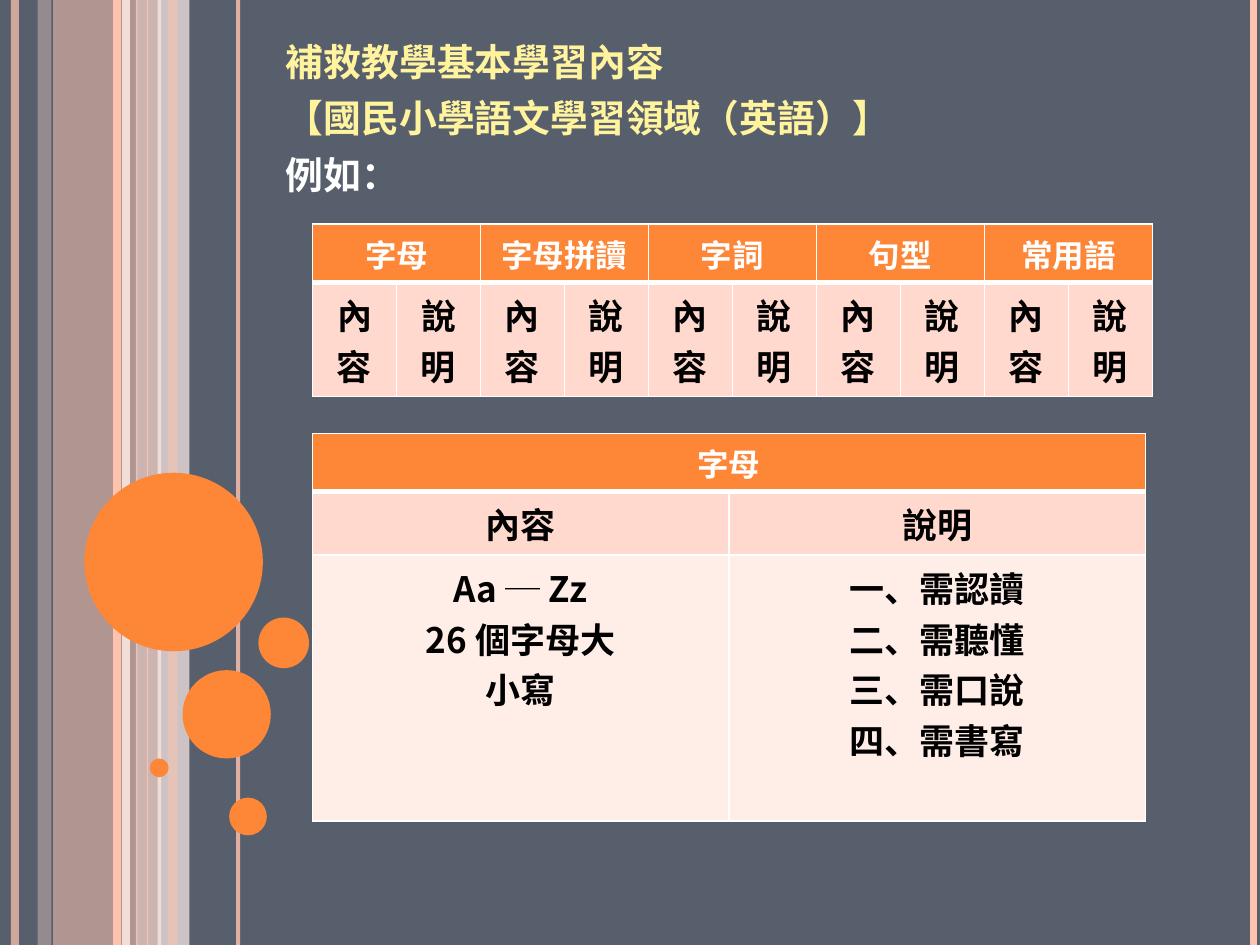
from copy import deepcopy
from lxml.etree import SubElement
from pptx import Presentation
from pptx.dml.color import RGBColor
from pptx.enum.shapes import MSO_CONNECTOR, MSO_SHAPE
from pptx.enum.text import MSO_ANCHOR, MSO_AUTO_SIZE, PP_ALIGN
from pptx.oxml.ns import qn
from pptx.util import Cm, Pt


class Theme:
    font = "Noto Sans CJK SC"
    back, white, black, gold = "575F6D", "FFFFFF", "000000", "FFF39D"
    orange, peach, pale, blush = "FE8637", "FEC3AE", "FFD9CE", "FFEDE8"
    title, head, body = 27, 18, 20
    thin, thick = 1, 3


# Content
TITLE = [("補救教學基本學習內容", Theme.gold),
         ("【國民小學語文學習領域（英語）】", Theme.gold),
         ("例如：", Theme.white)]
PAIR = ["內容", "說明"]
TOPICS = ["字母", "字母拼讀", "字詞", "句型", "常用語"]
LETTERS = ["Aa ─ Zz\n26 個字母大\n小寫",
           "一、需認讀\n二、需聽懂\n三、需口說\n四、需書寫"]

# Tables: left, top, width in cm; row heights; header texts; body rows
TABLES = [
    (6.3, 4.52, 16.93, [1.17, 2.29], TOPICS, [PAIR * len(TOPICS)]),
    (6.3, 8.74, 16.79, [1.17, 1.27, 5.36], TOPICS[:1], [PAIR, LETTERS]),
]

# Backdrop, in cm: bands (left, width, colour, opacity %)
BANDS = [(1.07, 1.7, Theme.peach, 54), (0.76, 0.28, Theme.pale, 36),
         (2.74, 0.51, Theme.pale, 70), (3.18, 0.64, Theme.blush, 71)]
TOP_BAND = (3.38, 0.2, Theme.peach, 51)
# Lines (x, points, colour, opacity %)
LINES = [(0.3, 4.5, Theme.peach, 73), (2.54, 4.5, Theme.blush, 83),
         (2.36, 4.5, Theme.peach, 100), (4.8, 2.25, Theme.peach, 82),
         (2.97, 0.75, Theme.peach, 100)]
EDGE = (25.27, 4.5, Theme.peach, 100)
# Dots (left, top, size)
DOTS = [(1.7, 9.53, 3.6), (3.68, 13.51, 1.78), (3.02, 15.29, 0.38),
        (4.62, 16.08, 0.76), (5.21, 12.45, 1.02)]

deck = Presentation()
deck.slide_width, deck.slide_height = Cm(25.4), Cm(19.05)
slide = deck.slides.add_slide(deck.slide_layouts[5])
shapes = slide.shapes


def paint(fill, color, alpha=100):
    fill.solid()
    fill.fore_color.rgb = RGBColor.from_string(color)
    if alpha < 100:
        for tag in fill.fore_color._xFill.iter(qn("a:srgbClr")):
            SubElement(tag, qn("a:alpha"), val=str(alpha * 1000))


def add_form(kind, left, top, width, height, color, alpha=100):
    form = shapes.add_shape(kind, Cm(left), Cm(top), Cm(width), Cm(height))
    form.shadow.inherit = False
    paint(form.fill, color, alpha)
    form.line.fill.background()


def add_band(left, width, color, alpha):
    add_form(MSO_SHAPE.RECTANGLE, left, 0, width, 19.05, color, alpha)


def add_line(x, size, color, alpha):
    line = shapes.add_connector(MSO_CONNECTOR.STRAIGHT, Cm(x), 0, Cm(x),
                                deck.slide_height)
    line.line.width = Pt(size)
    paint(line.line.fill, color, alpha)
    SubElement(line.element.spPr, qn("a:effectLst"))


def style(run, size, color):
    font = run.font
    font.size, font.bold, font.name = Pt(size), True, Theme.font
    font.color.rgb = RGBColor.from_string(color)
    SubElement(font._element, qn("a:ea"), typeface=Theme.font)


def set_edges(cell, top, bottom):
    props = cell._tc.get_or_add_tcPr()
    sides = [("L", Theme.thin), ("R", Theme.thin), ("T", top), ("B", bottom)]
    for spot, (side, size) in enumerate(sides):
        edge = SubElement(props, qn(f"a:ln{side}"), w=str(Pt(size)))
        fill = SubElement(edge, qn("a:solidFill"))
        SubElement(fill, qn("a:srgbClr"), val=Theme.white)
        props.insert(spot, edge)


def set_cell(cell, text, size, color):
    cell.text_frame.text = text
    for para in cell.text_frame.paragraphs:
        para.alignment = PP_ALIGN.CENTER
        for run in para.runs:
            style(run, size, color)


def add_grid(left, top, width, highs, heads, rows):
    count = len(heads) * len(PAIR)
    grid = shapes.add_table(len(highs), count, Cm(left), Cm(top), Cm(width),
                            Cm(sum(highs))).table
    for col in grid.columns:
        col.width = Cm(width / count)
    fills = [Theme.orange, Theme.pale, Theme.blush]
    for r, high in enumerate(highs):
        grid.rows[r].height = Cm(high)
        for c in range(count):
            cell = grid.cell(r, c)
            paint(cell.fill, fills[r])
            set_edges(cell, Theme.thick if r == 1 else Theme.thin,
                      Theme.thick if r == 0 else Theme.thin)
            if r:
                set_cell(cell, rows[r - 1][c], Theme.body, Theme.black)
    for i, head in enumerate(heads):
        cell = grid.cell(0, i * 2)
        cell.merge(grid.cell(0, i * 2 + 1))
        set_cell(cell, head, Theme.head, Theme.white)


# Backdrop
paint(slide.background.fill, Theme.back)
for band in BANDS:
    add_band(*band)
for line in LINES:
    add_line(*line)
add_band(*TOP_BAND)
for left, top, size in DOTS:
    add_form(MSO_SHAPE.OVAL, left, top, size, size, Theme.orange)
add_line(*EDGE)

# Title, one paragraph with line breaks, above the backdrop
title = shapes.title
shapes.element.append(title.element)
title.left, title.top, title.width, title.height = (
    Cm(5.51), Cm(0.91), Cm(17.15), Cm(3.23))
frame = title.text_frame
frame.auto_size, frame.word_wrap = MSO_AUTO_SIZE.NONE, True
frame.vertical_anchor = MSO_ANCHOR.BOTTOM
para = frame.paragraphs[0]
para.text = "\v".join(text for text, color in TITLE)
para.alignment = PP_ALIGN.LEFT
for run, (text, color) in zip(para.runs, TITLE):
    style(run, Theme.title, color)
    run.font._element.set("cap", "small")
for gap in para._p.findall(qn("a:br")):
    gap.append(deepcopy(para.runs[0].font._element))

# Tables
for table in TABLES:
    add_grid(*table)

deck.save("out.pptx")
